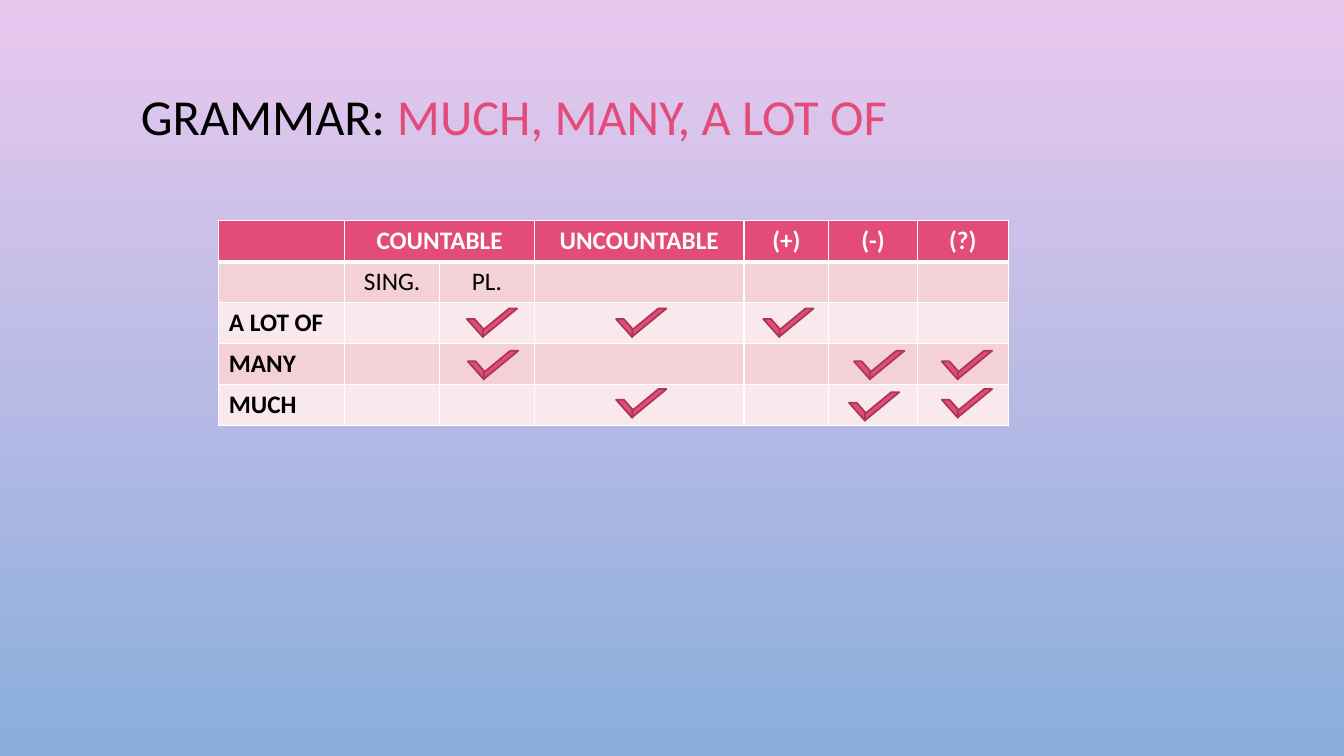
"""Build the grammar slide on much, many and a lot of."""
from lxml import etree
from pptx import Presentation
from pptx.dml.color import RGBColor
from pptx.enum.shapes import MSO_SHAPE
from pptx.enum.text import MSO_ANCHOR, PP_ALIGN
from pptx.oxml.ns import qn
from pptx.util import Emu, Inches, Pt

LEFT, CENTER = PP_ALIGN.LEFT, PP_ALIGN.CENTER
MIDDLE = MSO_ANCHOR.MIDDLE
STRIPE = MSO_SHAPE.DIAGONAL_STRIPE

COLORS = {
    "pink": "E34B7A", "outline": "A8375A", "dark band": "F4D0D7", "light band": "FAE9EC",
    "white": "FFFFFF", "black": "000000", "sky top": "E9C8EF", "sky bottom": "89AEDB",
}
FONT = "Calibri"
TITLE = [("GRAMMAR: ", "black"), ("MUCH, MANY, A LOT OF", "pink")]
TITLE_BOX = (1.3, 0.81, 11.36, 0.74)
ROWS = [
    ["", "COUNTABLE", "", "UNCOUNTABLE", "(+)", "(-)", "(?)"],
    ["", "SING.", "PL.", "", "", "", ""],
    ["A LOT OF", "", "", "", "", "", ""],
    ["MANY", "", "", "", "", "", ""],
    ["MUCH", "", "", "", "", "", ""],
]
TABLE_LEFT, TABLE_TOP, TABLE_HEIGHT = 2.17, 2.19, 2.03
COLUMN_WIDTHS = [1.25, 0.94, 0.94, 2.08, 0.84, 0.88, 0.9]
TICKS = [
    (4.62, 3.06), (6.1, 3.06), (7.56, 3.06),
    (4.63, 3.48), (8.46, 3.48), (9.33, 3.48),
    (6.1, 3.86), (8.41, 3.89), (9.33, 3.86),
]
TICK_STROKES = [
    {"offset": (0.17, 0), "size": (0.34, 0.28), "bend": 0.767, "rotation": 0},
    {"offset": (0, 0.115), "size": (0.18, 0.16), "bend": 0.524, "rotation": 90},
]


def rgb(name):
    return RGBColor.from_string(COLORS[name])


def add_text(paragraph, text, size=18, color="black", bold=False, align=LEFT):
    paragraph.alignment = align
    run = paragraph.add_run()
    run.text = text
    run.font.name = FONT
    run.font.size = Pt(size)
    run.font.bold = bold
    run.font.color.rgb = rgb(color)


def set_borders(cell, **widths):
    properties = cell._tc.get_or_add_tcPr()
    for position, (side, width) in enumerate(widths.items()):
        line = etree.Element(qn(f"a:{side}"), w=str(Pt(width)))
        fill = etree.SubElement(line, qn("a:solidFill"))
        etree.SubElement(fill, qn("a:srgbClr"), val=COLORS["white"])
        properties.insert(position, line)


def add_background(slide):
    fill = slide.background.fill
    fill.gradient()
    fill.gradient_angle = 270
    for stop, name, position in zip(fill.gradient_stops, ("sky top", "sky bottom"), (0, 1)):
        stop.color.rgb = rgb(name)
        stop.position = position


def add_title(slide):
    frame = slide.shapes.add_textbox(*map(Inches, TITLE_BOX)).text_frame
    frame.word_wrap = True
    frame.vertical_anchor = MIDDLE
    paragraph = frame.paragraphs[0]
    paragraph.line_spacing = 0.9
    for text, color in TITLE:
        add_text(paragraph, text, size=36, color=color)


def add_grammar_table(slide):
    table = slide.shapes.add_table(
        len(ROWS), len(COLUMN_WIDTHS), Inches(TABLE_LEFT), Inches(TABLE_TOP),
        Inches(sum(COLUMN_WIDTHS)), Inches(TABLE_HEIGHT)).table
    for column, width in zip(table.columns, COLUMN_WIDTHS):
        column.width = Inches(width)
    for row_index, texts in enumerate(ROWS):
        table.rows[row_index].height = Emu(Inches(TABLE_HEIGHT) // len(ROWS))
        header = row_index == 0
        band = "pink" if header else ("light band", "dark band")[row_index % 2]
        for column_index, text in enumerate(texts):
            cell = table.cell(row_index, column_index)
            cell.fill.solid()
            cell.fill.fore_color.rgb = rgb(band)
            set_borders(cell, lnL=1, lnR=1, lnT=3 if row_index == 1 else 1, lnB=3 if header else 1)
            if text:
                add_text(cell.text_frame.paragraphs[0], text,
                         color="white" if header else "black",
                         bold=header or column_index == 0,
                         align=CENTER if column_index else LEFT)
    table.cell(0, 1).merge(table.cell(0, 2))


def add_tick(slide, left, top):
    for stroke in TICK_STROKES:
        across, down = stroke["offset"]
        box = (left + across, top + down, *stroke["size"])
        shape = slide.shapes.add_shape(STRIPE, *map(Inches, box))
        shape.adjustments[0] = stroke["bend"]
        shape.rotation = stroke["rotation"]
        shape.shadow.inherit = False
        shape.fill.solid()
        shape.fill.fore_color.rgb = rgb("pink")
        shape.line.color.rgb = rgb("outline")
        shape.line.width = Pt(1.25)


def main():
    presentation = Presentation()
    presentation.slide_width = Inches(13.33)
    presentation.slide_height = Inches(7.5)
    slide = presentation.slides.add_slide(presentation.slide_layouts[6])
    add_background(slide)
    add_title(slide)
    add_grammar_table(slide)
    for left, top in TICKS:
        add_tick(slide, left, top)
    presentation.save("out.pptx")


if __name__ == "__main__":
    main()
